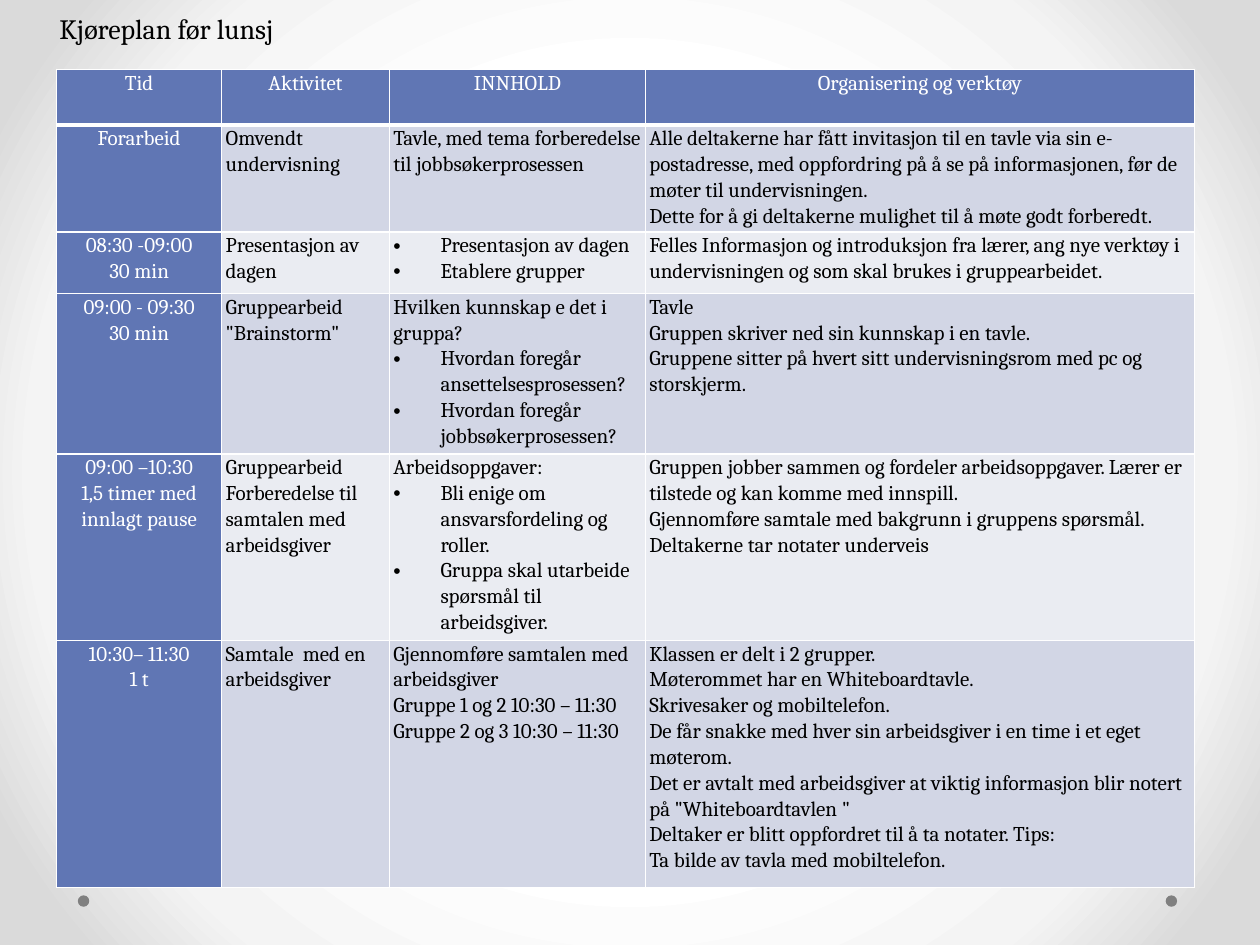
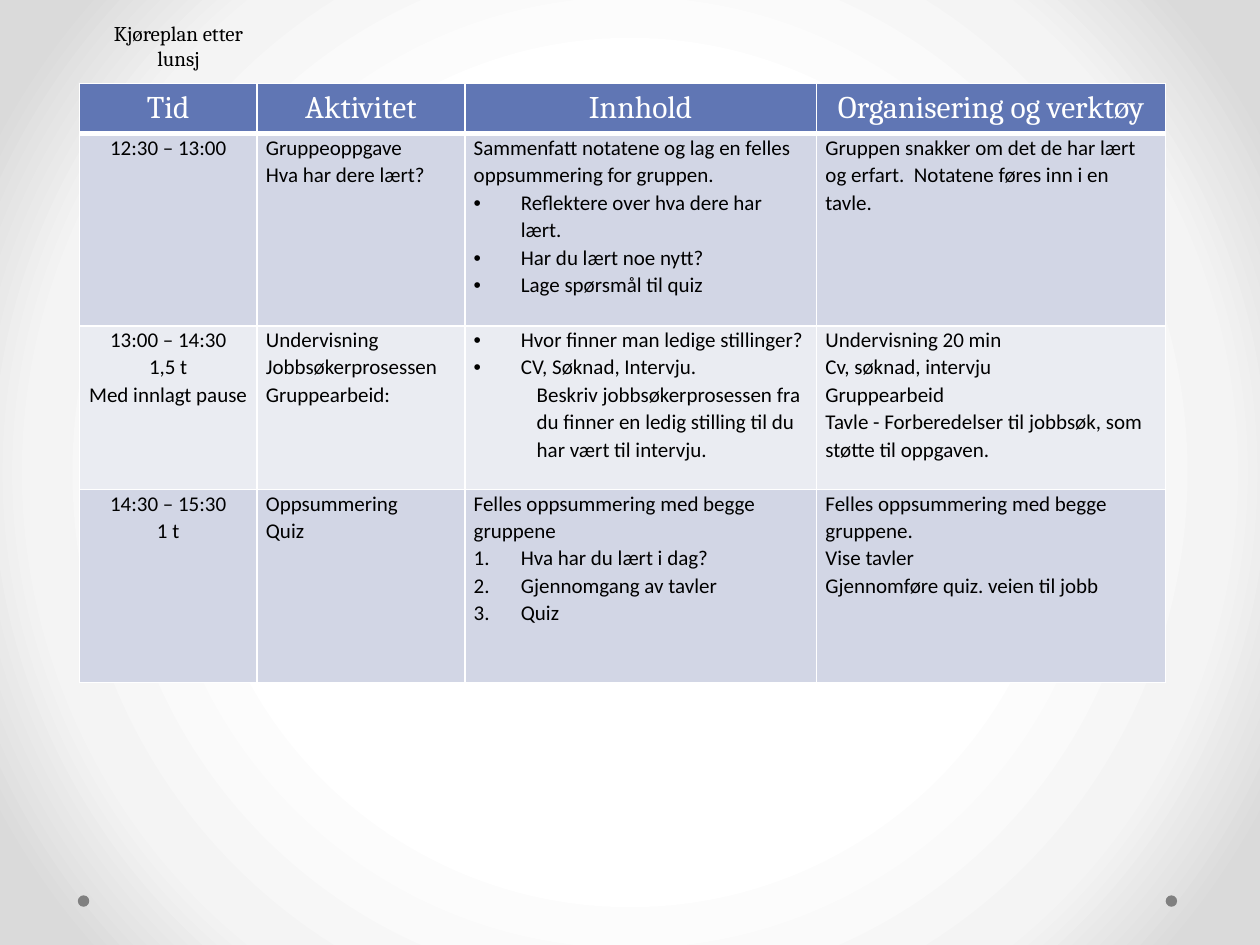
from lxml.etree import SubElement
from pptx import Presentation
from pptx.dml.color import RGBColor
from pptx.enum.shapes import MSO_SHAPE as Shape
from pptx.enum.text import MSO_AUTO_SIZE as AutoSize, PP_ALIGN as Align
from pptx.oxml.ns import qn
from pptx.util import Cm, Pt

COLORS = {
    "accent": "6076B4",
    "band_dark": "D2D6E5",
    "band_light": "EAECF2",
    "dot": "808080",
    "black": "000000",
    "white": "FFFFFF",
    "mist": "F4F4F4",
    "rim": "DADADA",
}
GLOW = [(50, "white"), (76, "mist"), (92, "rim")]
SERIF, SANS = "Cambria", "Calibri"
BULLET, NUMBER, INDENTED = "• ", "# ", "> "
HANGING = 0.95

MORNING = [
    ["Tid", "Aktivitet", "INNHOLD", "Organisering og verktøy"],
    [
        "Forarbeid",
        "Omvendt undervisning",
        "Tavle, med tema forberedelse til jobbsøkerprosessen",
        """Alle deltakerne har fått invitasjon til en tavle via sin e-postadresse, med oppfordring på å se på informasjonen, før de møter til undervisningen.
Dette for å gi deltakerne mulighet til å møte godt forberedt.""",
    ],
    [
        "08:30 -09:00\n30 min",
        "Presentasjon av dagen",
        "• Presentasjon av dagen\n• Etablere grupper",
        "Felles Informasjon og introduksjon fra lærer, ang nye verktøy i undervisningen og som skal brukes i gruppearbeidet.",
    ],
    [
        "09:00 - 09:30\n30 min",
        'Gruppearbeid\n"Brainstorm"',
        """Hvilken kunnskap e det i gruppa?
• Hvordan foregår ansettelsesprosessen?
• Hvordan foregår jobbsøkerprosessen?""",
        """Tavle
Gruppen skriver ned sin kunnskap i en tavle.
Gruppene sitter på hvert sitt undervisningsrom med pc og storskjerm.""",
    ],
    [
        "09:00 –10:30\n1,5 timer med innlagt pause",
        "Gruppearbeid\nForberedelse til samtalen med arbeidsgiver",
        """Arbeidsoppgaver:
• Bli enige om ansvarsfordeling og roller.
• Gruppa skal utarbeide spørsmål til arbeidsgiver.""",
        """Gruppen jobber sammen og fordeler arbeidsoppgaver. Lærer er tilstede og kan komme med innspill.
Gjennomføre samtale med bakgrunn i gruppens spørsmål. Deltakerne tar notater underveis""",
    ],
    [
        "10:30– 11:30\n1 t",
        "Samtale  med en arbeidsgiver",
        """Gjennomføre samtalen med arbeidsgiver
Gruppe 1 og 2 10:30 – 11:30
Gruppe 2 og 3 10:30 – 11:30""",
        """Klassen er delt i 2 grupper.
Møterommet har en Whiteboardtavle.
Skrivesaker og mobiltelefon.
De får snakke med hver sin arbeidsgiver i en time i et eget møterom.
Det er avtalt med arbeidsgiver at viktig informasjon blir notert på "Whiteboardtavlen "
Deltaker er blitt oppfordret til å ta notater. Tips:
Ta bilde av tavla med mobiltelefon.""",
    ],
]

AFTERNOON = [
    ["Tid", "Aktivitet", "Innhold", "Organisering og verktøy"],
    [
        "12:30 – 13:00",
        "Gruppeoppgave\nHva har dere lært?",
        """Sammenfatt notatene og lag en felles oppsummering for gruppen.
• Reflektere over hva dere har lært.
• Har du lært noe nytt?
• Lage spørsmål til quiz""",
        "Gruppen snakker om det de har lært og erfart.  Notatene føres inn i en tavle.",
    ],
    [
        "13:00 – 14:30\n1,5 t\nMed innlagt pause",
        "Undervisning\nJobbsøkerprosessen\nGruppearbeid:",
        """• Hvor finner man ledige stillinger?
• CV, Søknad, Intervju.
> Beskriv jobbsøkerprosessen fra du finner en ledig stilling til du har vært til intervju.""",
        """Undervisning 20 min
Cv, søknad, intervju
Gruppearbeid
Tavle - Forberedelser til jobbsøk, som støtte til oppgaven.""",
    ],
    [
        "14:30 – 15:30\n1 t",
        "Oppsummering\nQuiz",
        """Felles oppsummering med begge gruppene
# Hva har du lært i dag?
# Gjennomgang av tavler
# Quiz""",
        """Felles oppsummering med begge gruppene.
Vise tavler
Gjennomføre quiz. veien til jobb""",
    ],
]


def rgb(name):
    return RGBColor.from_string(COLORS[name])


def style_font(paragraph, face, size, color):
    font = paragraph.font
    font.name, font.size, font.bold = face, Pt(size), False
    font.color.rgb = rgb(color)


def set_glow(master):
    master.background.fill.gradient()
    gradient = master.element.find(".//" + qn("a:gradFill"))
    for part in list(gradient):
        gradient.remove(part)
    stops = SubElement(gradient, qn("a:gsLst"))
    for position, color in GLOW:
        stop = SubElement(stops, qn("a:gs"), pos=str(position * 1000))
        SubElement(stop, qn("a:srgbClr"), val=COLORS[color])
    circle = SubElement(gradient, qn("a:path"), path="circle")
    SubElement(circle, qn("a:fillToRect"), dict.fromkeys("ltrb", "50000"))


def add_dots(slide):
    for left in (1.57, 23.5):
        dot = slide.shapes.add_shape(Shape.OVAL, Cm(left), Cm(18.05), Cm(0.23), Cm(0.23))
        dot.shadow.inherit = False
        dot.fill.solid()
        dot.fill.fore_color.rgb = rgb("dot")
        dot.line.fill.background()


def add_title(slide, text, box, size):
    frame = slide.shapes.add_textbox(*map(Cm, box)).text_frame
    frame.word_wrap = True
    frame.auto_size = AutoSize.SHAPE_TO_FIT_TEXT
    title = frame.paragraphs[0]
    title.text = text
    title.alignment = Align.CENTER
    style_font(title, SERIF, size, "black")


def set_borders(cell, header):
    properties = cell._tc.get_or_add_tcPr()
    for index, side in enumerate("LRTB"):
        width = 3 if header and side == "B" else 1
        line = SubElement(properties, qn(f"a:ln{side}"), w=str(Pt(width)))
        fill = SubElement(line, qn("a:solidFill"))
        SubElement(fill, qn("a:srgbClr"), val=COLORS["white"])


def set_marker(paragraph, prefix):
    properties = paragraph._p.get_or_add_pPr()
    if prefix == INDENTED:
        properties.set("marL", str(Cm(1.27)))
        return
    properties.set("marL", str(Cm(HANGING)))
    properties.set("indent", str(-Cm(HANGING)))
    if prefix == BULLET:
        SubElement(properties, qn("a:buFont"), typeface="Arial")
        SubElement(properties, qn("a:buChar"), char="•")
    else:
        SubElement(properties, qn("a:buAutoNum"), type="arabicPeriod")


def fill_cell(cell, text, face, size, color, centred, spacing):
    frame = cell.text_frame
    for number, line in enumerate(text.split("\n")):
        paragraph = frame.add_paragraph() if number else frame.paragraphs[0]
        prefix = line[:2]
        if prefix in (BULLET, NUMBER, INDENTED):
            set_marker(paragraph, prefix)
            line = line[2:]
        paragraph.text = line
        paragraph.alignment = Align.CENTER if centred else Align.LEFT
        if spacing:
            paragraph.line_spacing = spacing
        style_font(paragraph, face, size, color)


def add_schedule(slide, plan, left, top, widths, heights, inset, face, header_size, accent_times):
    table = slide.shapes.add_table(
        len(plan), len(widths), Cm(left), Cm(top), Cm(sum(widths)), Cm(sum(heights))
    ).table
    for column, width in zip(table.columns, widths):
        column.width = Cm(width)
    for row, height in zip(table.rows, heights):
        row.height = Cm(height)
    for r, entries in enumerate(plan):
        for c, text in enumerate(entries):
            cell = table.cell(r, c)
            header = r == 0
            large_header = header and header_size > 12
            accented = header or (accent_times and c == 0)
            band = "band_dark" if r % 2 else "band_light"
            if not large_header:
                cell.margin_left = cell.margin_right = Cm(inset)
                cell.margin_top = cell.margin_bottom = 0
            set_borders(cell, header)
            cell.fill.solid()
            cell.fill.fore_color.rgb = rgb("accent" if accented else band)
            fill_cell(
                cell, text,
                SERIF if header else face,
                header_size if header else 12,
                "white" if accented else "black",
                header or c == 0,
                None if large_header else 1.07,
            )


def add_plan_slide(prs, title, title_box, title_size, **schedule):
    slide = prs.slides.add_slide(prs.slide_layouts[6])
    add_dots(slide)
    add_schedule(slide, **schedule)
    add_title(slide, title, title_box, title_size)


def main():
    prs = Presentation()
    prs.slide_width, prs.slide_height = Cm(25.4), Cm(19.05)
    set_glow(prs.slide_master)
    add_plan_slide(
        prs, "Kjøreplan før lunsj", (0.28, 0.1, 6.15, 0.94), 16,
        plan=MORNING, left=1.14, top=1.4,
        widths=[3.33, 3.38, 5.16, 11.07],
        heights=[1.12, 2.16, 1.24, 3.23, 3.76, 4.98],
        inset=0.08, face=SERIF, header_size=12, accent_times=True,
    )
    add_plan_slide(
        prs, "Kjøreplan etter lunsj", (1.7, 0.28, 3.8, 0.76), 12,
        plan=AFTERNOON, left=1.6, top=1.68,
        widths=[3.58, 4.19, 7.09, 7.04],
        heights=[0.99, 3.87, 3.3, 3.89],
        inset=0.18, face=SANS, header_size=18, accent_times=False,
    )
    prs.save("out.pptx")


if __name__ == "__main__":
    main()
